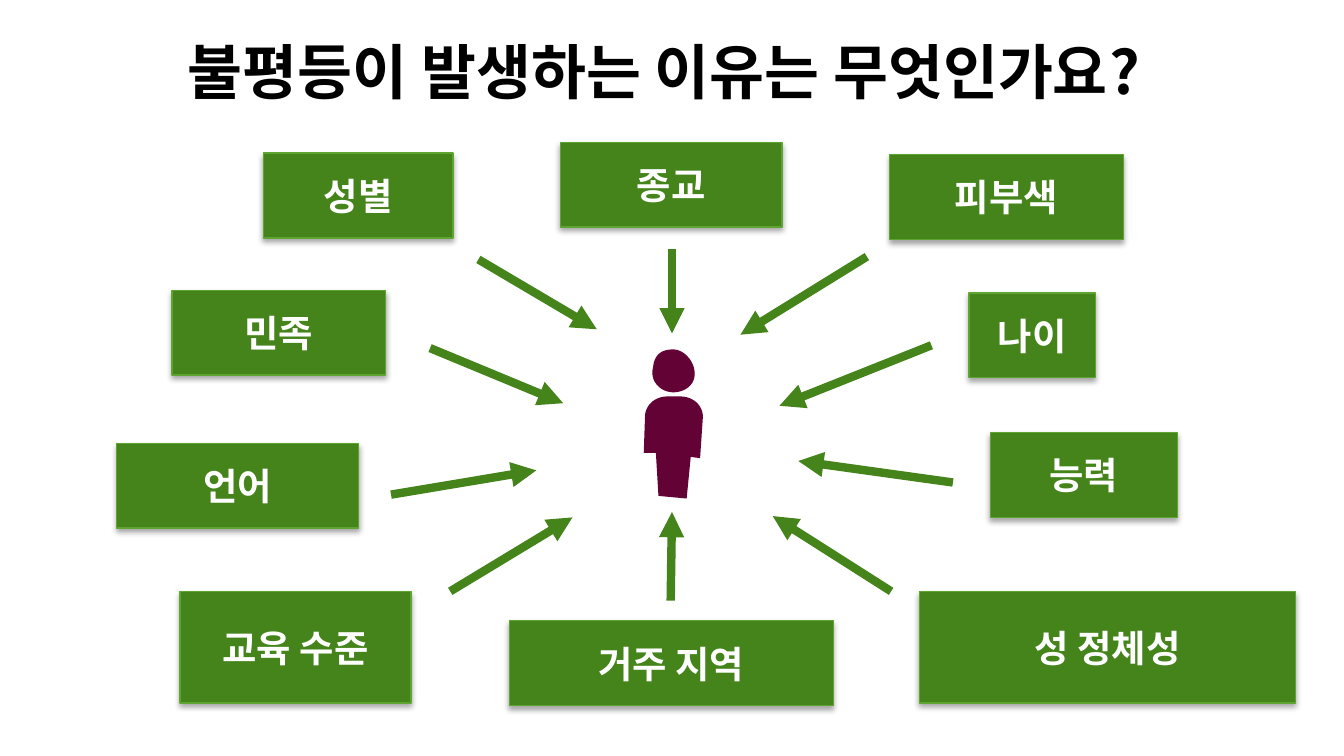
"""Build a slide on the causes of inequality around one person."""
import pptx
import pptx.dml.color
import pptx.enum.shapes
import pptx.enum.text
import pptx.oxml
import pptx.oxml.ns
import pptx.util

Pt = pptx.util.Pt
FONT = "Noto Sans CJK KR"
GREEN, EDGE, PLUM = "44841A", "5EA430", "630235"
WHITE, BLACK = "FFFFFF", "000000"
NS = pptx.oxml.ns.nsdecls("a")

BOXES = [
    ("피부색", 476.6, 82.8, 125.3, 45.4),
    ("성별", 141.1, 82.1, 101.5, 45.4),
    ("민족", 92.2, 155.5, 114.5, 45.4),
    ("능력", 530.6, 231.8, 100.1, 45.4),
    ("언어", 62.6, 237.6, 129.6, 45.4),
    ("나이", 519.1, 157, 67.7, 45.4),
    ("교육 수준", 96.5, 316.8, 123.8, 59.8),
    ("거주 지역", 272.9, 332.6, 173.5, 45.4),
    ("종교", 300.2, 76.3, 118.8, 45.4),
    ("성 정체성", 492.5, 316.8, 201.6, 59.8),
]
ARROWS = [
    (256.3, 139, 319.7, 176.4),
    (477.4, 316.8, 414, 276.5),
    (510.5, 258.5, 427.7, 247),
    (499, 185, 417.6, 217.4),
    (464.4, 137.5, 396.7, 179.3),
    (241.2, 316.8, 306.7, 277.2),
    (230.4, 186.5, 301.7, 216),
    (209.5, 265, 287.3, 252),
    (360, 133.2, 360, 178.6),
    (359.3, 321.8, 360, 274.3),
]
HEAD = [
    [(360.7, 210.2)],
    [(366.5, 210.2), (372.2, 206.6), (372.2, 200.2)],
    [(372.2, 193.7), (366.5, 187.2), (360.7, 187.2)],
    [(354.2, 187.2), (350.6, 190.1), (349.9, 196.6)],
    [(347.8, 204.5), (354.2, 210.2), (360.7, 210.2)],
]
BODY = [
    [(364.3, 212.4)],
    [(357.8, 212.4)],
    [(350.6, 212.4), (345.6, 217.4), (345.6, 223.2)],
    [(344.9, 242.6)],
    [(351.4, 242.6)],
    [(352.8, 265.7)],
    [(367.9, 267.1)],
    [(370.1, 244.8)],
    [(375.1, 245.5)],
    [(376.6, 223.2)],
    [(376.6, 217.4), (371.5, 212.4), (364.3, 212.4)],
]


def tint(code):
    """Turn a hex string into a colour."""
    return pptx.dml.color.RGBColor.from_string(code)


def xml(tag, inner="", **attrs):
    """Make one drawing element."""
    pairs = "".join(f' {key}="{val}"' for key, val in attrs.items())
    return pptx.oxml.parse_xml(f"<a:{tag} {NS}{pairs}>{inner}</a:{tag}>")


def write(shape, words, size, code, anchor):
    """Put one centred bold run into a shape."""
    frame = shape.text_frame
    frame.word_wrap = True
    frame.vertical_anchor = anchor
    para = frame.paragraphs[0]
    para.alignment = pptx.enum.text.PP_ALIGN.CENTER
    run = para.add_run()
    run.text = words
    run.font.size = Pt(size)
    run.font.bold = True
    run.font.color.rgb = tint(code)
    run.font.name = FONT
    run.font.element.append(xml("ea", typeface=FONT)) if hasattr(
        run.font, "element") else run._r.rPr.append(xml("ea", typeface=FONT))


def title(slide, words):
    """Add the heading."""
    box = slide.shapes.add_textbox(Pt(62.6), Pt(15.1), Pt(586.1), Pt(56.9))
    write(box, words, 32, BLACK, pptx.enum.text.MSO_ANCHOR.TOP)


def cause(slide, words, left, top, width, height):
    """Add a green box with a soft shadow."""
    box = slide.shapes.add_shape(pptx.enum.shapes.MSO_SHAPE.RECTANGLE,
                                 Pt(left), Pt(top), Pt(width), Pt(height))
    box.fill.solid()
    box.fill.fore_color.rgb = tint(GREEN)
    box.line.color.rgb = tint(EDGE)
    box.line.width = Pt(0.75)
    box.shadow.inherit = False
    shade = xml("outerShdw",
                '<a:srgbClr val="000000"><a:alpha val="35000"/></a:srgbClr>',
                blurRad=Pt(3.1), dist=Pt(1.8), dir=90 * 60000, rotWithShape=0)
    box.element.spPr.find(pptx.oxml.ns.qn("a:effectLst")).append(shade)
    write(box, words, 20, WHITE, pptx.enum.text.MSO_ANCHOR.MIDDLE)


def arrow(slide, *ends):
    """Add an arrow that points at the person."""
    link = slide.shapes.add_connector(
        pptx.enum.shapes.MSO_CONNECTOR.STRAIGHT, *map(Pt, ends))
    link.line.color.rgb = tint(GREEN)
    link.line.width = Pt(4.5)
    props = link.element.spPr
    props.find(pptx.oxml.ns.qn("a:ln")).append(xml("tailEnd", type="triangle"))
    props.append(xml("effectLst"))


def curve(start, one, two, end, steps=16):
    """Sample a cubic curve after its start."""
    for step in range(1, steps + 1):
        t = step / steps
        u = 1 - t
        yield tuple(u**3 * a + 3 * u * u * t * b + 3 * u * t * t * c + t**3 * d
                    for a, b, c, d in zip(start, one, two, end))


def form(group, parts):
    """Add a plum outline made of lines and curves."""
    dots = list(parts[0])
    for part in parts[1:]:
        dots.extend(curve(dots[-1], *part) if len(part) == 3 else part)
    pen = [(Pt(x), Pt(y)) for x, y in dots]
    maker = group.shapes.build_freeform(*pen[0])
    maker.add_line_segments(pen[1:], close=True)
    shape = maker.convert_to_shape()
    shape.fill.solid()
    shape.fill.fore_color.rgb = tint(PLUM)
    shape.line.fill.background()
    shape.shadow.inherit = False


def main():
    """Build and save the deck."""
    deck = pptx.Presentation()
    deck.slide_width, deck.slide_height = Pt(720), Pt(405)
    slide = deck.slides.add_slide(deck.slide_layouts[6])
    person = slide.shapes.add_group_shape()
    for parts in (HEAD, BODY):
        form(person, parts)
    title(slide, "불평등이 발생하는 이유는 무엇인가요?")
    for box in BOXES:
        cause(slide, *box)
    for ends in ARROWS:
        arrow(slide, *ends)
    deck.save("out.pptx")


if __name__ == "__main__":
    main()
